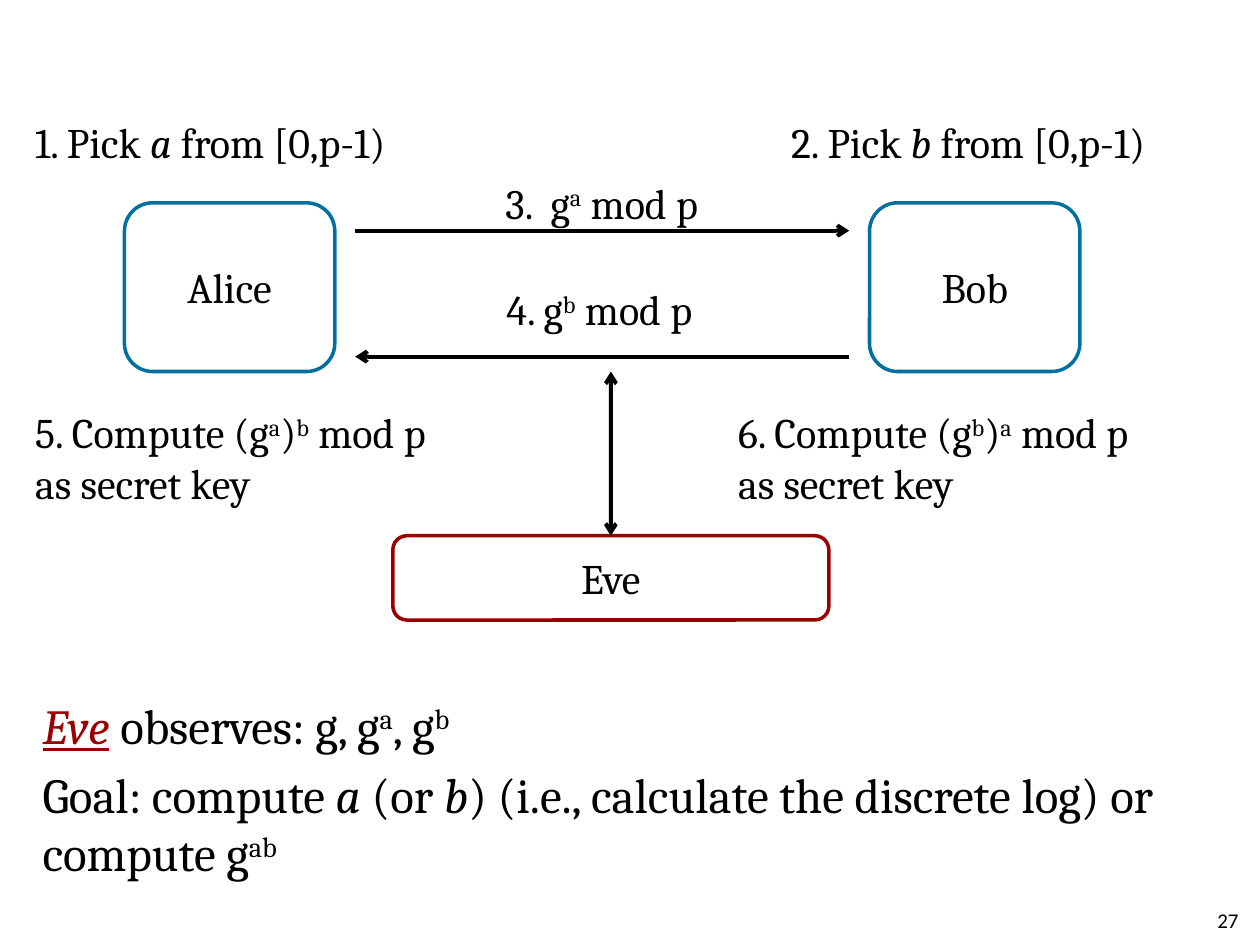
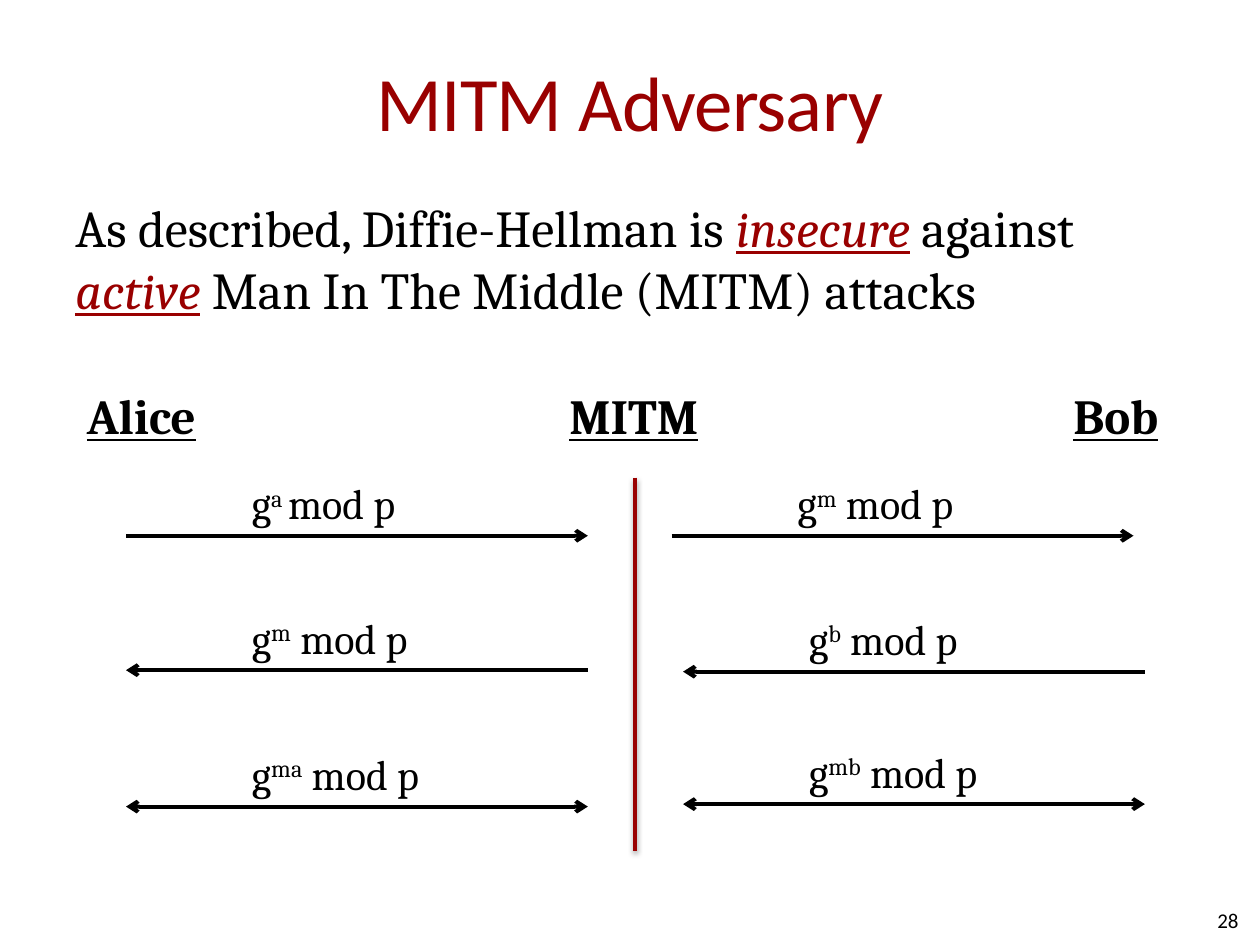
"""Build two slides on Diffie-Hellman key exchange and its man in the middle."""
from typing import NamedTuple

from lxml.etree import SubElement
from pptx import Presentation
from pptx.dml.color import RGBColor
from pptx.enum.shapes import MSO_CONNECTOR, MSO_SHAPE
from pptx.enum.text import MSO_ANCHOR, MSO_AUTO_SIZE, PP_ALIGN
from pptx.oxml.ns import qn
from pptx.shapes.autoshape import Shape
from pptx.shapes.connector import Connector
from pptx.slide import Slide
from pptx.text.text import TextFrame
from pptx.util import Cm, Pt

BLACK, WHITE, RED, BLUE = "000000", "FFFFFF", "990000", "00709E"
SERIF, SANS = "Cambria", "Calibri"
SUPER, SLANT, STRESS, BREAK = "^", "*", "_", "\v"
MARKS = (SUPER, SLANT, STRESS, BREAK)
BODY_PAD = (0.25, 0.13)
ENDS = {"to": ("tailEnd",), "from": ("headEnd",), "both": ("headEnd", "tailEnd"), "": ()}


class Box(NamedTuple):
    x: float
    y: float
    w: float
    h: float = 1.02


class Label(NamedTuple):
    box: Box
    text: str


class Party(NamedTuple):
    box: Box
    name: str
    color: str


class Message(NamedTuple):
    x: float
    y: float
    text: str
    width: float
    ends: str
    span: float = 9.31
    dx: float = 2.54
    dy: float = 1.17


LABELS = (
    Label(Box(0.71, 2.34, 7.7), "1. Pick *a* from [0,p-1)"),
    Label(Box(15.95, 2.34, 7.67), "2. Pick *b* from [0,p-1)"),
    Label(Box(0.71, 8.2, 8.48, 2.06), "5. Compute (g^a^)^b^ mod p\vas secret key"),
    Label(Box(14.88, 8.2, 8.48, 2.06), "6. Compute (g^b^)^a^ mod p\vas secret key"),
)
PARTIES = (
    Party(Box(2.51, 4.09, 4.24, 3.4), "Alice", BLUE),
    Party(Box(17.53, 4.09, 4.24, 3.4), "Bob", BLUE),
    Party(Box(7.92, 10.8, 8.79, 1.7), "Eve", RED),
)
TRADES = (
    Message(7.16, 4.65, "3.  g^a^ mod p", 4.22, "to", 9.96, 3.03, 1.07),
    Message(7.16, 7.19, "4. g^b^ mod p", 4.06, "from", 9.96, 3.05, 1.47),
)
RELAYS = (
    Message(2.54, 10.8, "g^a ^mod p", 3.2, "to"),
    Message(13.54, 10.8, "g^m^ mod p", 3.38, "to"),
    Message(2.54, 13.51, "g^m^ mod p", 3.38, "from"),
    Message(13.77, 13.54, "g^b^ mod p", 3.23, "from"),
    Message(2.54, 16.26, "g^ma^ mod p", 3.66, "both"),
    Message(13.77, 16.21, "g^mb^ mod p", 3.66, "both"),
)
HEADS = (
    Label(Box(1.5, 7.65, 2.77, 1.45), "Alice"),
    Label(Box(11.23, 7.65, 3.18, 1.45), "MITM"),
    Label(Box(21.39, 7.65, 2.31, 1.45), "Bob"),
)


def paint(code: str) -> RGBColor:
    """Turn a hex string into a colour."""
    return RGBColor.from_string(code)


def place(box: Box) -> tuple[Cm, ...]:
    """Turn a box into lengths."""
    return tuple(Cm(side) for side in box)


def write(frame: TextFrame, text: str, *, size: float = 24, font: str = SERIF,
          color: str = BLACK, bold: bool = False, line: bool = False,
          align: PP_ALIGN = PP_ALIGN.LEFT, anchor: MSO_ANCHOR = MSO_ANCHOR.TOP,
          wrap: bool = True, pad: tuple[float, float] = (0, 0), track: int = 0) -> None:
    """Fill a frame; marks in the text toggle superscript, italic and stress."""
    frame.word_wrap = wrap
    frame.auto_size = MSO_AUTO_SIZE.NONE if wrap else MSO_AUTO_SIZE.SHAPE_TO_FIT_TEXT
    frame.vertical_anchor = anchor
    frame.margin_left = frame.margin_right = Cm(pad[0])
    frame.margin_top = frame.margin_bottom = Cm(pad[1])
    for index, words in enumerate(text.split("\n")):
        para = frame.add_paragraph() if index else frame.paragraphs[0]
        para.alignment = align
        para.space_before = Pt(size * 0.2 if index else 0)
        for mark in MARKS:
            words = words.replace(mark, f"\t{mark}\t")
        active = set()
        for part in words.split("\t"):
            if part == BREAK:
                para.add_line_break()
            elif part in MARKS:
                active ^= {part}
            elif part:
                run = para.add_run()
                run.text = part
                stress = STRESS in active
                run.font.name, run.font.size = font, Pt(size)
                run.font.bold, run.font.underline = bold, line or stress
                run.font.italic = stress or SLANT in active
                run.font.color.rgb = paint(RED if stress else color)
                props = run._r.get_or_add_rPr()
                if SUPER in active:
                    props.set("baseline", "30000")
                if track:
                    props.set("spc", str(track))


def note(slide: Slide, box: Box, text: str, **look) -> None:
    """Add a text box."""
    write(slide.shapes.add_textbox(*place(box)).text_frame, text, **look)


def draw(slide: Slide, start: tuple[float, float], end: tuple[float, float],
         ends: str = "", color: str = BLACK, width: float = 2.25,
         shade: bool = False) -> Connector:
    """Add a straight line with arrowheads and, if asked, a soft shadow."""
    points = (Cm(value) for value in (*start, *end))
    link = slide.shapes.add_connector(MSO_CONNECTOR.STRAIGHT, *points)
    link.line.color.rgb, link.line.width = paint(color), Pt(width)
    for tag in ENDS[ends]:
        SubElement(link.line._get_or_add_ln(), qn(f"a:{tag}"), type="arrow")
    effects = SubElement(link._element.spPr, qn("a:effectLst"))
    if shade:
        glow = SubElement(effects, qn("a:outerShdw"), blurRad=str(Pt(3.1)),
                          dist=str(Pt(1.6)), dir="5400000", rotWithShape="0")
        tint = SubElement(glow, qn("a:srgbClr"), val=BLACK)
        SubElement(tint, qn("a:alpha"), val="38000")
    return link


def send(slide: Slide, item: Message) -> None:
    """Draw a message arrow with its text above."""
    draw(slide, (item.x, item.y), (item.x + item.span, item.y), item.ends)
    note(slide, Box(item.x + item.dx, item.y - item.dy, item.width), item.text, wrap=False)


def frame(slide: Slide, item: Party) -> Shape:
    """Draw a party as a rounded box."""
    shape = slide.shapes.add_shape(MSO_SHAPE.ROUNDED_RECTANGLE, *place(item.box))
    shape.shadow.inherit = False
    shape.fill.solid()
    shape.fill.fore_color.rgb = paint(WHITE)
    shape.line.color.rgb, shape.line.width = paint(item.color), Pt(2)
    write(shape.text_frame, item.name, align=PP_ALIGN.CENTER, anchor=MSO_ANCHOR.MIDDLE)
    return shape


def number(slide: Slide, page: int) -> None:
    """Add the page number."""
    note(slide, Box(19.05, 18.03, 5.92), str(page), size=12, font=SANS,
         align=PP_ALIGN.RIGHT, anchor=MSO_ANCHOR.MIDDLE)


def title(slide: Slide, text: str) -> None:
    """Move and format the title placeholder."""
    shape = slide.shapes.title
    shape.left, shape.top, shape.width, shape.height = place(Box(1.27, 0.43, 22.86, 3.18))
    write(shape.text_frame, text, size=44, font=SANS, color=RED, align=PP_ALIGN.CENTER,
          anchor=MSO_ANCHOR.MIDDLE, pad=(0, 0.13), track=-50)


def build_trade(slide: Slide) -> None:
    """Show the key exchange and what Eve sees."""
    note(slide, Box(0.61, 13.89, 24.16, 4.11),
         "_Eve_ observes: g, g^a^, g^b^\n"
         "Goal: compute *a* (or *b*) (i.e., calculate the discrete log) or compute g^ab^",
         size=28, pad=BODY_PAD)
    for item in TRADES:
        send(slide, item)
    for label in LABELS:
        note(slide, label.box, label.text, wrap=False)
    alice, bob, eve = [frame(slide, party) for party in PARTIES]
    box = PARTIES[-1].box
    middle = box.x + box.w / 2
    tap = draw(slide, (middle, 7.49), (middle, box.y), "both")
    tap.end_connect(eve, 0)
    number(slide, 27)


def build_attack(slide: Slide) -> None:
    """Show the attack from the middle."""
    title(slide, "MITM Adversary")
    note(slide, Box(1.27, 3.81, 22.86, 3.38),
         "As described, Diffie-Hellman is _insecure_ against "
         "_active_ Man In The Middle (MITM) attacks", size=29.6, pad=BODY_PAD)
    for head in HEADS:
        note(slide, head.box, head.text, size=28, bold=True, line=True,
             wrap=False, pad=BODY_PAD)
    for item in RELAYS:
        send(slide, item)
    draw(slide, (12.8, 9.63), (12.8, 17.15), color=RED, width=2, shade=True)
    number(slide, 28)


def main() -> None:
    """Build and save the deck."""
    deck = Presentation()
    deck.slide_width, deck.slide_height = Cm(25.4), Cm(19.05)
    build_trade(deck.slides.add_slide(deck.slide_layouts.get_by_name("Blank")))
    build_attack(deck.slides.add_slide(deck.slide_layouts.get_by_name("Title Only")))
    deck.save("out.pptx")


if __name__ == "__main__":
    main()
